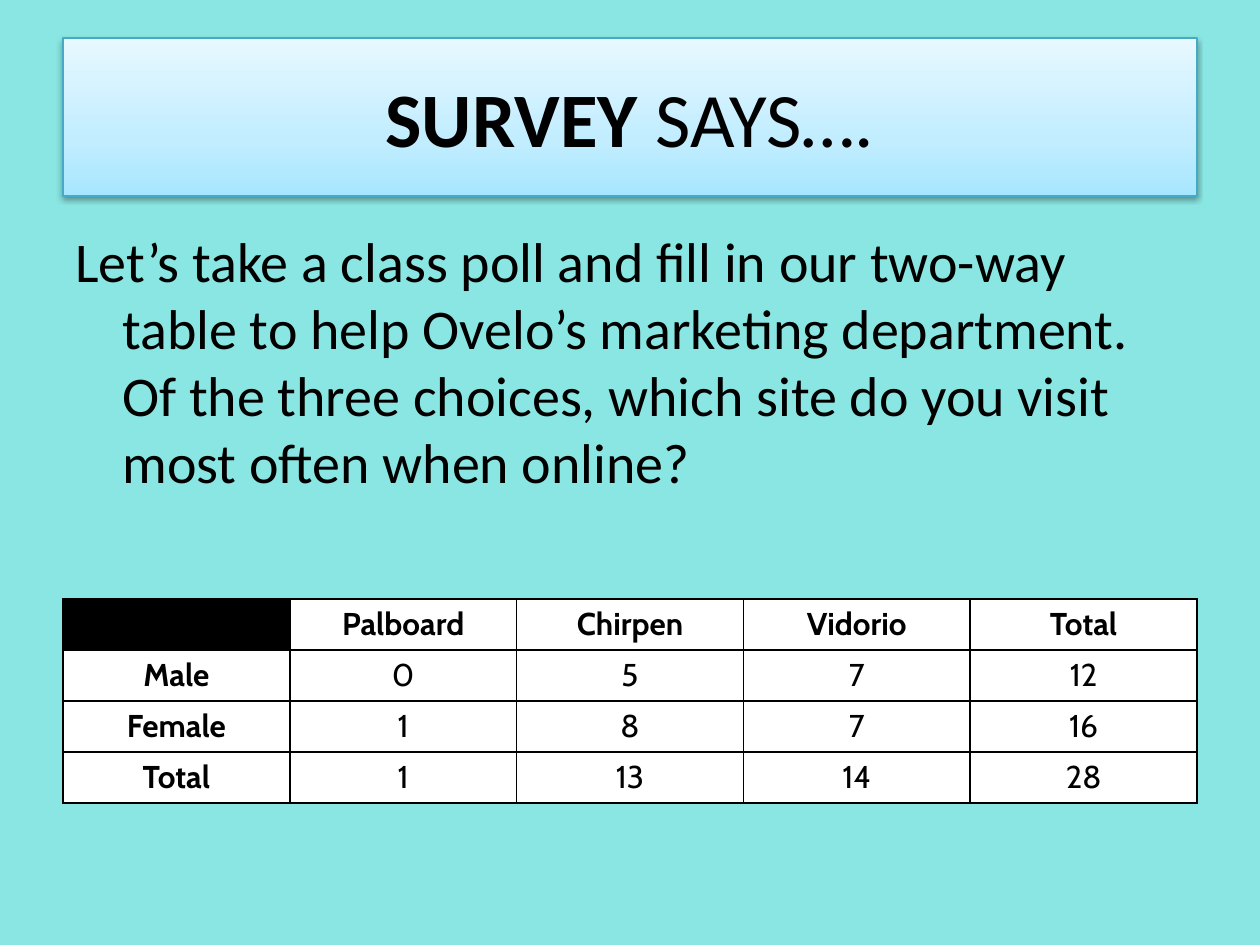
from copy import deepcopy

from lxml.etree import SubElement
from pptx import Presentation
from pptx.dml.color import RGBColor
from pptx.enum.shapes import MSO_SHAPE
from pptx.enum.text import MSO_ANCHOR, PP_ALIGN
from pptx.oxml.ns import qn
from pptx.util import Emu, Pt

EMU_PER_PX = 914400 / 126

BLACK = RGBColor(0x00, 0x00, 0x00)
WHITE = RGBColor(0xFF, 0xFF, 0xFF)
AQUA = RGBColor(0x8A, 0xE6, 0xE2)
BANNER_EDGE = RGBColor(0x46, 0xAA, 0xC5)
BANNER_STOPS = [
    (0, RGBColor(0xA7, 0xE6, 0xFF)),
    (0.35, RGBColor(0xC1, 0xED, 0xFF)),
    (1, RGBColor(0xE7, 0xF8, 0xFF)),
]

QUESTION = (
    "Let’s take a class poll and fill in our two-way table to help Ovelo’s "
    "marketing department. Of the three choices, which site do you visit "
    "most often when online?"
)
SURVEY_ROWS = [
    ["", "Palboard", "Chirpen", "Vidorio", "Total"],
    ["Male", "0", "5", "7", "12"],
    ["Female", "1", "8", "7", "16"],
    ["Total", "1", "13", "14", "28"],
]


def px(length):
    return Emu(round(length * EMU_PER_PX))


def add_span(para, text, **font_format):
    span = para.add_run()
    span.text = text
    span.font.color.rgb = BLACK
    for name, value in font_format.items():
        setattr(span.font, name, value)


def add_gradient(shape, stops, angle):
    shape.fill.gradient()
    shape.fill.gradient_angle = angle
    stop_list = shape.element.spPr.find(qn("a:gradFill")).find(qn("a:gsLst"))
    stop_list.append(deepcopy(stop_list[-1]))
    for stop, (position, color) in zip(shape.fill.gradient_stops, stops):
        stop.position = position
        stop.color.rgb = color


def add_drop_shadow(shape):
    shape.shadow.inherit = False
    effects = shape.element.spPr.find(qn("a:effectLst"))
    shadow = SubElement(effects, qn("a:outerShdw"), blurRad=str(Pt(3.1)),
                        dist=str(Pt(1.6)), dir="5400000", rotWithShape="0")
    color = SubElement(shadow, qn("a:srgbClr"), val=str(BLACK))
    SubElement(color, qn("a:alpha"), val="38000")


def add_banner(page, left, top, width, height):
    banner = page.shapes.add_shape(
        MSO_SHAPE.RECTANGLE, px(left), px(top), px(width), px(height))
    add_gradient(banner, BANNER_STOPS, 90)
    add_drop_shadow(banner)
    banner.line.color.rgb = BANNER_EDGE
    banner.line.width = Pt(0.75)
    banner.text_frame.vertical_anchor = MSO_ANCHOR.MIDDLE
    para = banner.text_frame.paragraphs[0]
    para.alignment = PP_ALIGN.CENTER
    for text, bold in (("SURVEY", True), (" SAYS….", False)):
        add_span(para, text, name="Calibri", size=Pt(44), bold=bold)


def add_question(page, left, top, width, height):
    box = page.shapes.add_textbox(px(left), px(top), px(width), px(height))
    box.text_frame.word_wrap = True
    para = box.text_frame.paragraphs[0]
    para.space_before = Pt(3.6)
    hanging = px(47)
    properties = para._p.get_or_add_pPr()
    properties.set("marL", str(hanging))
    properties.set("indent", str(-hanging))
    add_span(para, QUESTION, name="Calibri", size=Pt(32))


def add_cell_borders(cell):
    properties = cell._tc.get_or_add_tcPr()
    for index, side in enumerate(("lnL", "lnR", "lnT", "lnB")):
        line = properties.makeelement(qn(f"a:{side}"), {"w": str(Pt(1))})
        fill = SubElement(line, qn("a:solidFill"))
        SubElement(fill, qn("a:srgbClr"), val=str(BLACK))
        properties.insert(index, line)


def add_survey_table(page, left, top, width, height):
    table = page.shapes.add_table(
        len(SURVEY_ROWS), len(SURVEY_ROWS[0]),
        px(left), px(top), px(width), px(height)).table
    table.first_row = table.horz_banding = False
    for column in table.columns:
        column.width = px(width / len(table.columns))
    for row in table.rows:
        row.height = px(height / len(table.rows))
    for row_index, texts in enumerate(SURVEY_ROWS):
        for column_index, text in enumerate(texts):
            cell = table.cell(row_index, column_index)
            cell.fill.solid()
            cell.fill.fore_color.rgb = WHITE if text else BLACK
            add_cell_borders(cell)
            if text:
                para = cell.text_frame.paragraphs[0]
                para.alignment = PP_ALIGN.CENTER
                is_header = row_index == 0 or column_index == 0
                add_span(para, text, name="Cabin", size=Pt(18), bold=is_header)


def main():
    deck = Presentation()
    deck.slide_width, deck.slide_height = px(1260), px(945)
    page = deck.slides.add_slide(deck.slide_layouts[6])
    page.background.fill.solid()
    page.background.fill.fore_color.rgb = AQUA
    add_banner(page, 63, 38, 1134, 158)
    add_question(page, 63, 220, 1134, 624)
    add_survey_table(page, 63, 599, 1134, 204)
    deck.save("out.pptx")


if __name__ == "__main__":
    main()
